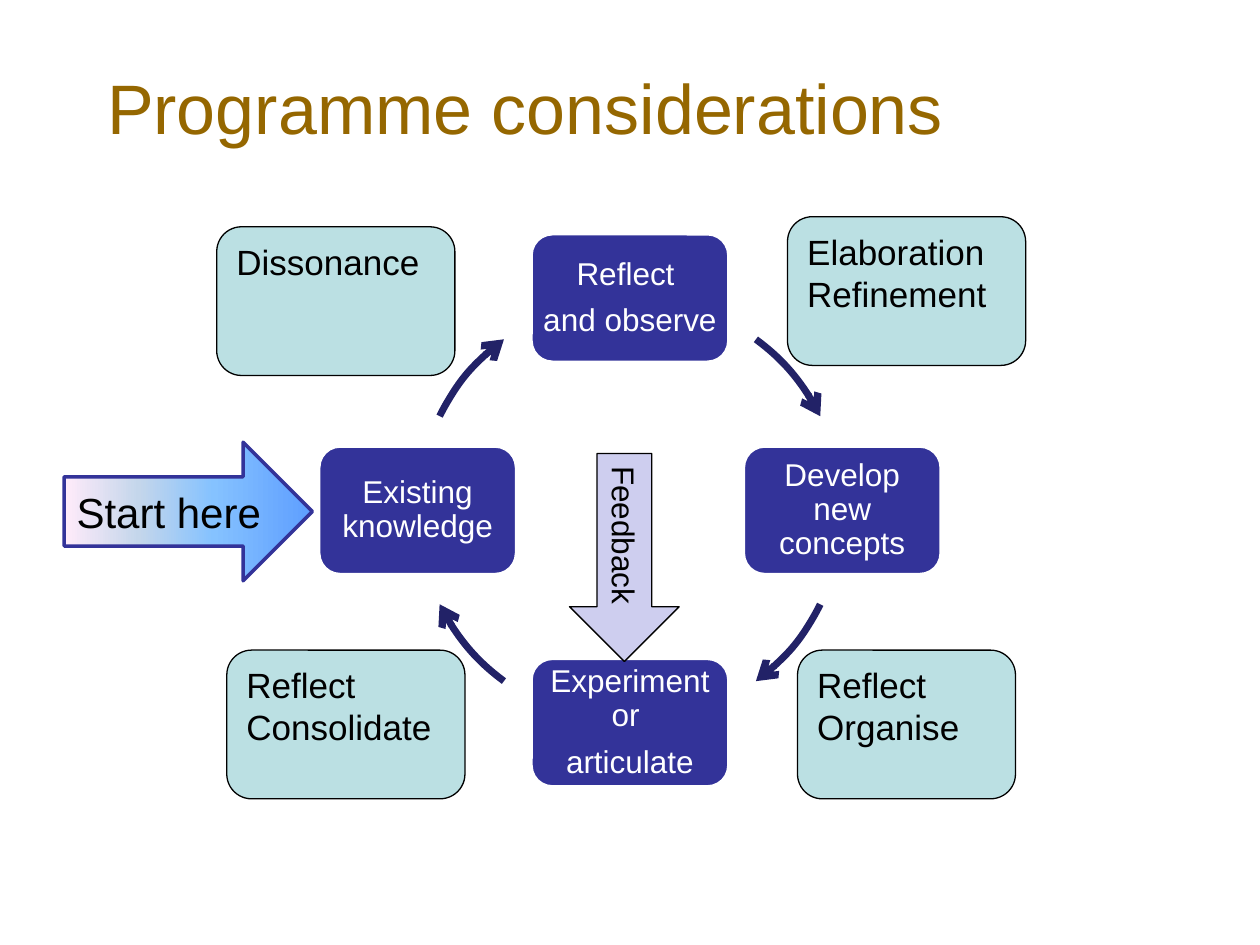
from copy import deepcopy
from dataclasses import dataclass
from math import cos, radians, sin

from pptx import Presentation
from pptx.dml.color import RGBColor as RGB
from pptx.enum.shapes import MSO_SHAPE as SHAPE
from pptx.enum.text import MSO_ANCHOR as ANCHOR, MSO_AUTO_SIZE as AUTO, PP_ALIGN as ALIGN
from pptx.oxml.ns import qn
from pptx.util import Inches, Pt


@dataclass(frozen=True)
class Theme:
    font: str = "Arial"
    title: str = "956700"
    node: str = "333399"
    arc: str = "222267"
    card: str = "BBE0E3"
    feedback: str = "CECEEF"
    black: str = "000000"
    white: str = "FFFFFF"
    start_stops: tuple = ((0, "5E9EFF"), (40, "85C2FF"), (70, "C4D6EB"), (100, "FFEBFA"))
    title_size: int = 40
    start_size: int = 24
    card_size: int = 20
    node_size: int = 18


theme = Theme()


def write(frame, text, size, color=theme.black, align=ALIGN.LEFT, anchor=ANCHOR.TOP,
          margins=(0.1, 0.05, 0.1, 0.05), spacing=1.0, after=0):
    """Fill a text frame, one paragraph for each line of text."""
    frame.word_wrap = True
    frame.auto_size = AUTO.NONE
    frame.vertical_anchor = anchor
    (frame.margin_left, frame.margin_top,
     frame.margin_right, frame.margin_bottom) = map(Inches, margins)
    for index, line in enumerate(text.split("\n")):
        paragraph = frame.add_paragraph() if index else frame.paragraphs[0]
        paragraph.alignment = align
        paragraph.line_spacing = spacing
        paragraph.space_before = Pt(0)
        paragraph.space_after = Pt(after)
        run = paragraph.add_run()
        run.text = line
        run.font.name = theme.font
        run.font.size = Pt(size)
        run.font.color.rgb = RGB.from_string(color)


def add_shape(kind, left, top, width, height, fill, line, weight):
    """Add a flat preset shape; without a fill colour it stays open."""
    shape = slide.shapes.add_shape(kind, *map(Inches, (left, top, width, height)))
    shape.shadow.inherit = False
    if fill:
        shape.fill.solid()
        shape.fill.fore_color.rgb = RGB.from_string(fill)
    else:
        shape.fill.background()
    shape.line.color.rgb = RGB.from_string(line)
    shape.line.width = Pt(weight)
    return shape


deck = Presentation()
deck.slide_width, deck.slide_height = Inches(10), Inches(7.5)
slide = deck.slides.add_slide(deck.slide_layouts[5])

# Title
title = slide.shapes.title
title.left, title.top, title.width, title.height = map(Inches, (0.75, 0.42, 8.5, 1))
write(title.text_frame, "Programme considerations", size=theme.title_size,
      color=theme.title, margins=(0.1, 0.09, 0.1, 0.05))

# Learning cycle: nodes a quarter turn apart, clockwise from the top
center_x, center_y, radius = 5, 4.05, 1.685
node_width, node_height = 1.57, 1.02
steps = ["Reflect \nand observe", "Develop new concepts",
         "Experiment or \narticulate", "Existing knowledge"]
for index, step in enumerate(steps):
    angle = radians(90 * index - 90)
    node = add_shape(SHAPE.ROUNDED_RECTANGLE,
                     center_x + radius * cos(angle) - node_width / 2,
                     center_y + radius * sin(angle) - node_height / 2,
                     node_width, node_height, theme.node, theme.white, 2)
    write(node.text_frame, step, size=theme.node_size, color=theme.white,
          align=ALIGN.CENTER, anchor=ANCHOR.MIDDLE, margins=(0.02,) * 4,
          spacing=0.9, after=7)

# Curved arrows between the nodes, as start and end angles in degrees
for start_angle, end_angle in [(306.4, 333.7), (26.3, 53.6), (126.4, 153.7), (206.3, 233.6)]:
    arc = add_shape(SHAPE.ARC, center_x - radius, center_y - radius,
                    2 * radius, 2 * radius, None, theme.arc, 4)
    # Angles are stored in 60000ths of a degree, adjustments in 100000ths
    arc.adjustments[0] = start_angle * 0.6
    arc.adjustments[1] = end_angle * 0.6
    outline = arc.line._get_or_add_ln()
    outline.append(outline.makeelement(qn("a:tailEnd"), {"type": "arrow"}))

# Outcome cards around the cycle
cards = [("Reflect\nOrganise", 6.33, 5.16, 1.73), ("Reflect\nConsolidate", 1.8, 5.16, 1.89),
         ("Elaboration\nRefinement", 6.25, 1.72, 1.89), ("Dissonance", 1.72, 1.8, 1.89)]
for outcome, left, top, width in cards:
    card = add_shape(SHAPE.ROUNDED_RECTANGLE, left, top, width, 1.18,
                     theme.card, theme.black, 0.75)
    write(card.text_frame, outcome, size=theme.card_size)

# Feedback arrow, pointing down
feedback = add_shape(SHAPE.RIGHT_ARROW, 4.13, 3.99, 1.65, 0.87,
                     theme.feedback, theme.black, 0.75)
feedback.rotation = 90
write(feedback.text_frame, "Feedback", size=theme.node_size, anchor=ANCHOR.MIDDLE)

# Start arrow with a four-stop gradient
start = add_shape(SHAPE.RIGHT_ARROW, 0.51, 3.51, 1.97, 1.1, theme.white, theme.node, 2)
write(start.text_frame, "Start here", size=theme.start_size, anchor=ANCHOR.MIDDLE)
start.fill.gradient()
start.fill.gradient_angle = 180
stop_list = start._element.spPr.find(qn("a:gradFill")).find(qn("a:gsLst"))
for extra in [deepcopy(stop) for stop in stop_list]:
    stop_list.append(extra)
for stop, (position, color) in zip(start.fill.gradient_stops, theme.start_stops):
    stop.position = position / 100
    stop.color.rgb = RGB.from_string(color)

deck.save("out.pptx")
